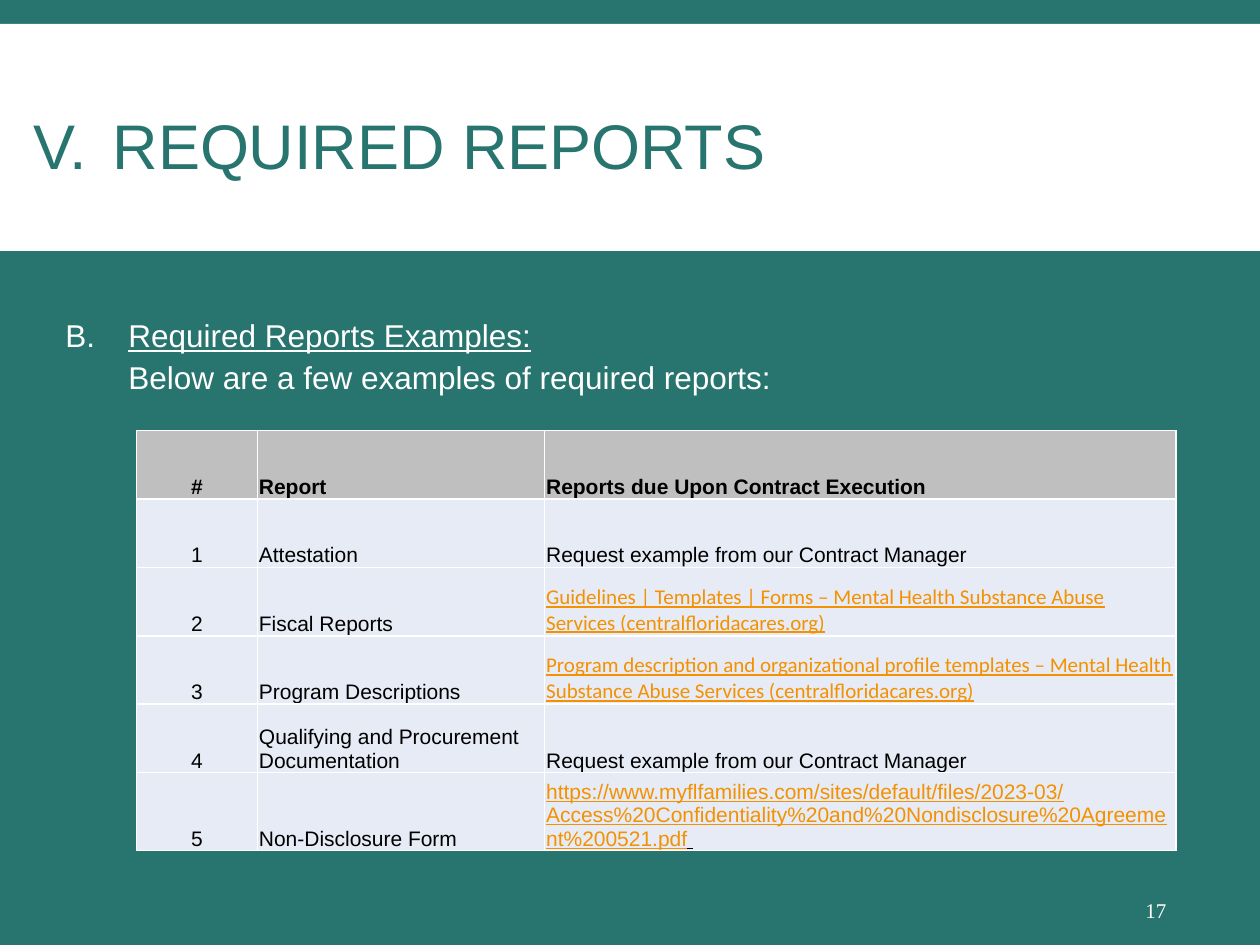
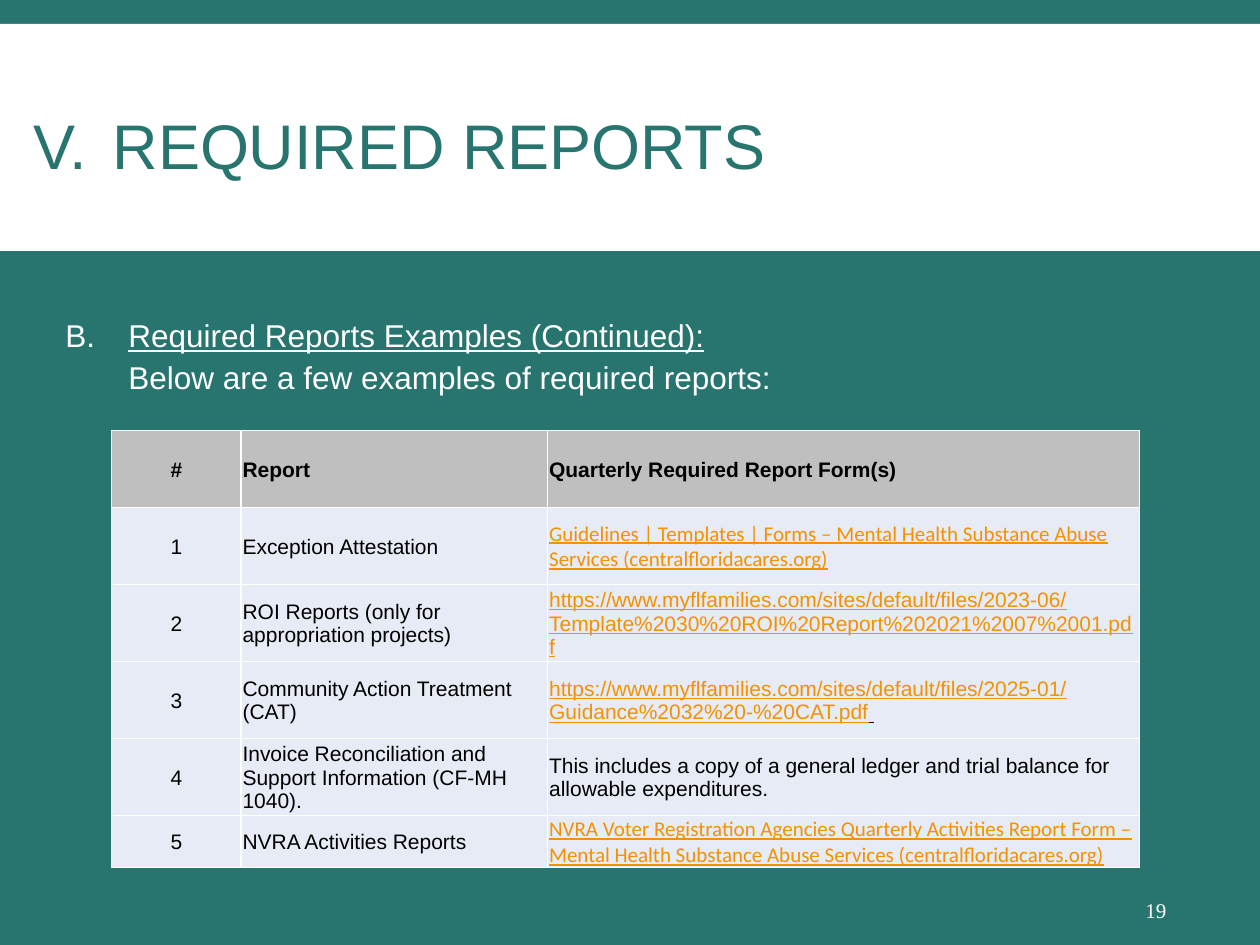
from dataclasses import dataclass

import pptx
import pptx.dml.color
import pptx.enum.shapes
import pptx.enum.text
import pptx.oxml.ns
import pptx.util
from lxml import etree

Cm, Pt = pptx.util.Cm, pptx.util.Pt
Align, Anchor = pptx.enum.text.PP_ALIGN, pptx.enum.text.MSO_ANCHOR


@dataclass(frozen=True)
class Theme:
    teal: str = "28746E"
    white: str = "FFFFFF"
    black: str = "000000"
    header_fill: str = "BFBFBF"
    row_fill: str = "E7EBF5"
    link: str = "F49100"
    font: str = "Arial"
    link_font: str = "Calibri"
    number_font: str = "Times New Roman"
    title_size: int = 36
    body_size: int = 18
    small_size: int = 12


@dataclass(frozen=True)
class Link:
    text: str
    font: str = Theme.link_font
    tail: str = ""


THEME = Theme()
FORMS_PAGE = Link("Guidelines | Templates | Forms – Mental Health Substance Abuse "
                  "Services (centralfloridacares.org)")
ON_REQUEST = "Request example from our Contract Manager"

REPORT_SLIDES = [
    dict(
        number="17", heading="Required Reports Examples:",
        left=2.75, anchor=Anchor.BOTTOM,
        columns=[2.44, 5.79, 12.73], rows=[1.38] * 5 + [1.57],
        due="Reports due Upon Contract Execution",
        reports=[
            ("Attestation", ON_REQUEST),
            ("Fiscal Reports", FORMS_PAGE),
            ("Program Descriptions",
             Link("Program description and organizational profile templates – Mental "
                  "Health Substance Abuse Services (centralfloridacares.org)")),
            ("Qualifying and Procurement Documentation", ON_REQUEST),
            ("Non-Disclosure Form",
             Link("https://www.myflfamilies.com/sites/default/files/2023-03/"
                  "Access%20Confidentiality%20and%20Nondisclosure%20Agreement"
                  "%200521.pdf", THEME.font, " ")),
        ]),
    dict(
        number="19", heading="Required Reports Examples (Continued):",
        left=2.25, anchor=Anchor.MIDDLE,
        columns=[2.61, 6.18, 11.93], rows=[1.55] * 5 + [1.03],
        due="Quarterly Required Report Form(s)",
        reports=[
            ("Exception Attestation", FORMS_PAGE),
            ("ROI Reports (only for appropriation projects)",
             Link("https://www.myflfamilies.com/sites/default/files/2023-06/"
                  "Template%2030%20ROI%20Report%202021%2007%2001.pdf", THEME.font)),
            ("Community Action Treatment (CAT)",
             Link("https://www.myflfamilies.com/sites/default/files/2025-01/"
                  "Guidance%2032%20-%20CAT.pdf", THEME.font, " ")),
            ("Invoice Reconciliation and Support Information (CF-MH 1040).",
             "This includes a copy of a general ledger and trial balance for "
             "allowable expenditures."),
            ("NVRA Activities Reports",
             Link("NVRA Voter Registration Agencies Quarterly Activities Report Form – "
                  "Mental Health Substance Abuse Services (centralfloridacares.org)")),
        ]),
]


def rgb(color):
    return pptx.dml.color.RGBColor.from_string(color)


def add_xml(parent, tag, **attributes):
    return etree.SubElement(parent, pptx.oxml.ns.qn(tag), attributes)


# Text
def write(paragraph, text, size=THEME.small_size, font=THEME.font, color=THEME.black,
          bold=False, underline=False, align=None, spacing=None):
    if align is not None:
        paragraph.alignment = align
    if spacing is not None:
        paragraph.line_spacing = spacing
    run = paragraph.add_run()
    run.text = text
    run.font.size = Pt(size)
    run.font.name = font
    run.font.bold = bold
    run.font.underline = underline
    run.font.color.rgb = rgb(color)


def indent(paragraph, margin, numbering=None, start=1):
    properties = paragraph._p.get_or_add_pPr()
    properties.set("marL", str(Cm(margin)))
    properties.set("indent", str(-Cm(margin) if numbering else 0))
    if numbering:
        add_xml(properties, "a:buAutoNum", type=numbering, startAt=str(start))


def add_text_frame(slide, left, top, width, height, anchor=Anchor.MIDDLE):
    frame = slide.shapes.add_textbox(Cm(left), Cm(top), Cm(width), Cm(height)).text_frame
    frame.word_wrap = True
    frame.vertical_anchor = anchor
    return frame


# Shared slide parts
def add_base(presentation, number):
    slide = presentation.slides.add_slide(presentation.slide_layouts[6])
    slide.background.fill.solid()
    slide.background.fill.fore_color.rgb = rgb(THEME.teal)

    band = slide.shapes.add_shape(pptx.enum.shapes.MSO_SHAPE.RECTANGLE,
                                  0, Cm(0.48), Cm(25.4), Cm(4.58))
    band.shadow.inherit = False
    band.fill.solid()
    band.fill.fore_color.rgb = rgb(THEME.white)
    band.line.fill.background()

    title = add_text_frame(slide, 0.43, 0.93, 23.06, 4.19).paragraphs[0]
    indent(title, 1.59, "romanUcPeriod", 5)
    write(title, "REQUIRED REPORTS", size=THEME.title_size, color=THEME.teal, spacing=0.85)

    page_number = add_text_frame(slide, 22.96, 17.83, 1.98, 1.02)
    page_number.margin_left = Cm(0.13)
    write(page_number.paragraphs[0], number, font=THEME.number_font, color=THEME.white)
    return slide


def add_introduction(slide, heading):
    frame = add_text_frame(slide, 1.07, 6.2, 23.29, 2.1, Anchor.TOP)
    look = dict(size=THEME.body_size, color=THEME.white, spacing=1.07)
    topic = frame.paragraphs[0]
    indent(topic, 1.27, "alphaUcPeriod", 2)
    write(topic, heading, underline=True, **look)
    explanation = frame.add_paragraph()
    explanation.space_before = Pt(0.7)
    indent(explanation, 1.27)
    write(explanation, "Below are a few examples of required reports:", **look)


# Report table
def style_cell(cell, fill, anchor):
    cell.vertical_anchor = anchor
    cell.margin_left = cell.margin_right = cell.margin_top = Cm(0.03)
    cell.margin_bottom = 0
    properties = cell._tc.get_or_add_tcPr()
    for side in ("a:lnL", "a:lnR", "a:lnT", "a:lnB"):
        border = add_xml(properties, side, w=str(Pt(1)))
        add_xml(add_xml(border, "a:solidFill"), "a:srgbClr", val=THEME.white)
    cell.fill.solid()
    cell.fill.fore_color.rgb = rgb(fill)


def fill_cell(cell, content, **look):
    paragraph = cell.text_frame.paragraphs[0]
    if isinstance(content, Link):
        write(paragraph, content.text, font=content.font, color=THEME.link, underline=True)
        if content.tail:
            write(paragraph, content.tail, underline=True)
    else:
        write(paragraph, content, **look)


def add_report_table(slide, left, columns, rows, due, reports, anchor):
    lines = [("#", "Report", due)]
    lines += [(str(i), *report) for i, report in enumerate(reports, 1)]
    table = slide.shapes.add_table(len(rows), len(columns), Cm(left), Cm(8.68),
                                   Cm(sum(columns)), Cm(sum(rows))).table
    for column, width in zip(table.columns, columns):
        column.width = Cm(width)
    for row, height in zip(table.rows, rows):
        row.height = Cm(height)
    for r, line in enumerate(lines):
        for c, content in enumerate(line):
            cell = table.cell(r, c)
            style_cell(cell, THEME.row_fill if r else THEME.header_fill, anchor)
            fill_cell(cell, content, bold=r == 0,
                      align=Align.LEFT if c else Align.CENTER)


def main():
    presentation = pptx.Presentation()
    presentation.slide_width, presentation.slide_height = Cm(25.4), Cm(19.05)
    for content in REPORT_SLIDES:
        report_table = dict(content)
        slide = add_base(presentation, report_table.pop("number"))
        add_introduction(slide, report_table.pop("heading"))
        add_report_table(slide, **report_table)
    presentation.save("out.pptx")


if __name__ == "__main__":
    main()
